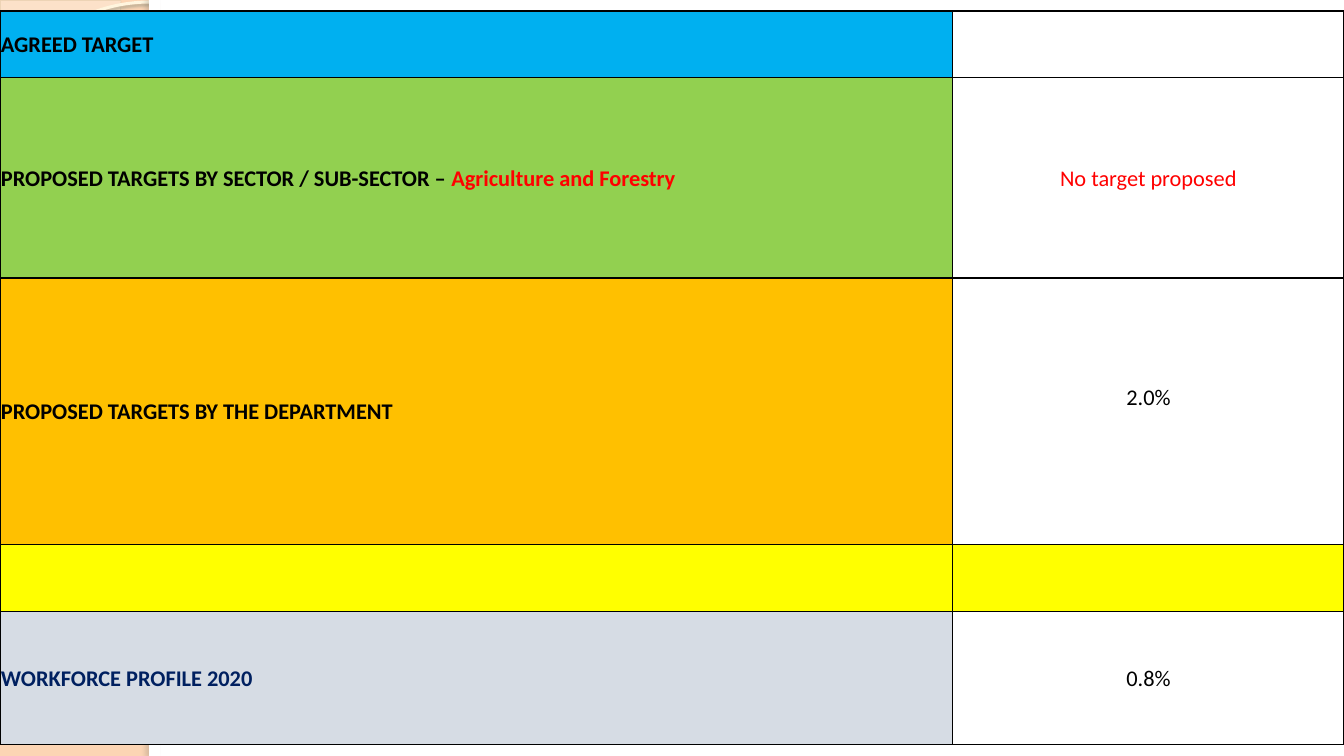
from dataclasses import dataclass

from lxml.etree import SubElement
from pptx import Presentation
from pptx.dml.color import RGBColor
from pptx.enum.shapes import MSO_SHAPE as Shape
from pptx.enum.text import MSO_ANCHOR as Anchor, PP_ALIGN as Align
from pptx.oxml.ns import qn
from pptx.util import Inches, Pt


@dataclass(frozen=True)
class Theme:
    font: str = "Calibri"
    size: float = 16
    black: str = "000000"
    red: str = "FF0000"
    navy: str = "002060"
    white: str = "FFFFFF"
    peach: str = "FCD5B4"
    cream: str = "FEFAF4"
    tan: str = "D3C39F"
    ivory: str = "FFF5DE"
    blue: str = "00B0F0"
    green: str = "92D050"
    orange: str = "FFC000"
    yellow: str = "FFFF00"
    grey: str = "D6DCE4"


T = Theme()
WIDTH, HEIGHT = 13.33, 7.5
rgb = RGBColor.from_string

# Each row: grid units, label runs, label fill, value, value colour, value fill, bottom inset
TARGET_ROWS = [
    (1, [("AGREED TARGET", T.black)], T.blue, "", T.black, None, 0),
    (3, [("PROPOSED TARGETS BY SECTOR / SUB-SECTOR – ", T.black),
         ("Agriculture and Forestry", T.red)], T.green,
     "No target proposed", T.red, None, 0),
    (4, [("PROPOSED TARGETS BY THE DEPARTMENT", T.black)], T.orange,
     "2.0%", T.black, None, 0.27),
    (1, [], T.yellow, "", T.black, T.yellow, 0),
    (2, [("WORKFORCE PROFILE 2020", T.navy)], T.grey, "0.8%", T.black, None, 0),
]


def add_panel(slide, kind, box, fill=None, line=None, width=0):
    sp = slide.shapes.add_shape(kind, *(Inches(v) for v in box))
    sp.shadow.inherit = False
    if fill:
        sp.fill.solid()
        sp.fill.fore_color.rgb = rgb(fill)
    else:
        sp.fill.background()
    if line:
        sp.line.color.rgb = rgb(line)
        sp.line.width = Pt(width)
    else:
        sp.line.fill.background()
    return sp


def add_shadow(sp, color, alpha, blur, distance, angle):
    effects = sp._element.spPr.find(qn("a:effectLst"))
    shadow = SubElement(effects, qn("a:outerShdw"), blurRad=str(Pt(blur)),
                        dist=str(Pt(distance)), dir=str(angle * 60000), rotWithShape="0")
    clr = SubElement(shadow, qn("a:srgbClr"), val=color)
    SubElement(clr, qn("a:alpha"), val=str(alpha * 1000))


def add_backdrop(slide, box):
    x, y, w, h = box
    slide.background.fill.solid()
    slide.background.fill.fore_color.rgb = rgb(T.peach)
    pie = add_panel(slide, Shape.PIE, (x - 1.19, y - 0.89, 2.39, 1.79), T.cream, T.tan, 0.25)
    pie.adjustments[0], pie.adjustments[1] = 0, 54.02
    clr = pie._element.spPr.find(qn("a:solidFill"))[0]
    SubElement(clr, qn("a:alpha"), val="33000")
    ring = add_panel(slide, Shape.OVAL, (x + 0.25, y + 0.02, 2.48, 1.86), None, T.ivory, 2.15)
    add_shadow(ring, "B0A68F", 85, 2, 2, 90)
    side = 1.48
    add_panel(slide, Shape.RECTANGLE, (x + side, y, w - side, h), T.white)
    edge = add_panel(slide, Shape.RECTANGLE, (x + side, y, 0.11, h), T.white)
    add_shadow(edge, "736F63", 25, 3, 3, 180)


def style_cell(cell, fill, bottom):
    tcPr = cell._tc.get_or_add_tcPr()
    for side in ("a:lnL", "a:lnR", "a:lnT", "a:lnB"):
        ln = SubElement(tcPr, qn(side), w=str(Pt(1)))
        SubElement(SubElement(ln, qn("a:solidFill")), qn("a:srgbClr"), val=T.black)
    if fill:
        cell.fill.solid()
        cell.fill.fore_color.rgb = rgb(fill)
    else:
        cell.fill.background()
    cell.vertical_anchor = Anchor.MIDDLE
    cell.margin_left = cell.margin_right = cell.margin_top = Inches(0.01)
    cell.margin_bottom = Inches(bottom)


def write_cell(cell, runs, bold, align):
    p = cell.text_frame.paragraphs[0]
    p.alignment = align
    p.font.name, p.font.size, p.font.bold = T.font, Pt(T.size), bold
    for text, color in runs:
        r = p.add_run()
        r.text = text
        r.font.name, r.font.size, r.font.bold = T.font, Pt(T.size), bold
        r.font.color.rgb = rgb(color)


def add_target_table(slide, box, rows):
    x, y, w, h = box
    table = slide.shapes.add_table(len(rows), 2, *(Inches(v) for v in box)).table
    table.first_row = table.horz_banding = False
    label_width = 0.709 * w
    table.columns[0].width = Inches(label_width)
    table.columns[1].width = Inches(w - label_width)
    unit = h / sum(row[0] for row in rows)
    for i, (units, label, fill, value, color, value_fill, bottom) in enumerate(rows):
        table.rows[i].height = Inches(units * unit)
        left, right = table.cell(i, 0), table.cell(i, 1)
        style_cell(left, fill, 0)
        style_cell(right, value_fill, bottom)
        write_cell(left, label, True, Align.LEFT)
        write_cell(right, [(value, color)] if value else [], False, Align.CENTER)


def main():
    prs = Presentation()
    prs.slide_width, prs.slide_height = Inches(WIDTH), Inches(HEIGHT)
    slide = prs.slides.add_slide(prs.slide_layouts[6])
    add_backdrop(slide, (0, 0, WIDTH, HEIGHT))
    margin = 0.11
    add_target_table(slide, (0, margin, WIDTH, HEIGHT - 2 * margin), TARGET_ROWS)
    prs.save("out.pptx")


if __name__ == "__main__":
    main()
